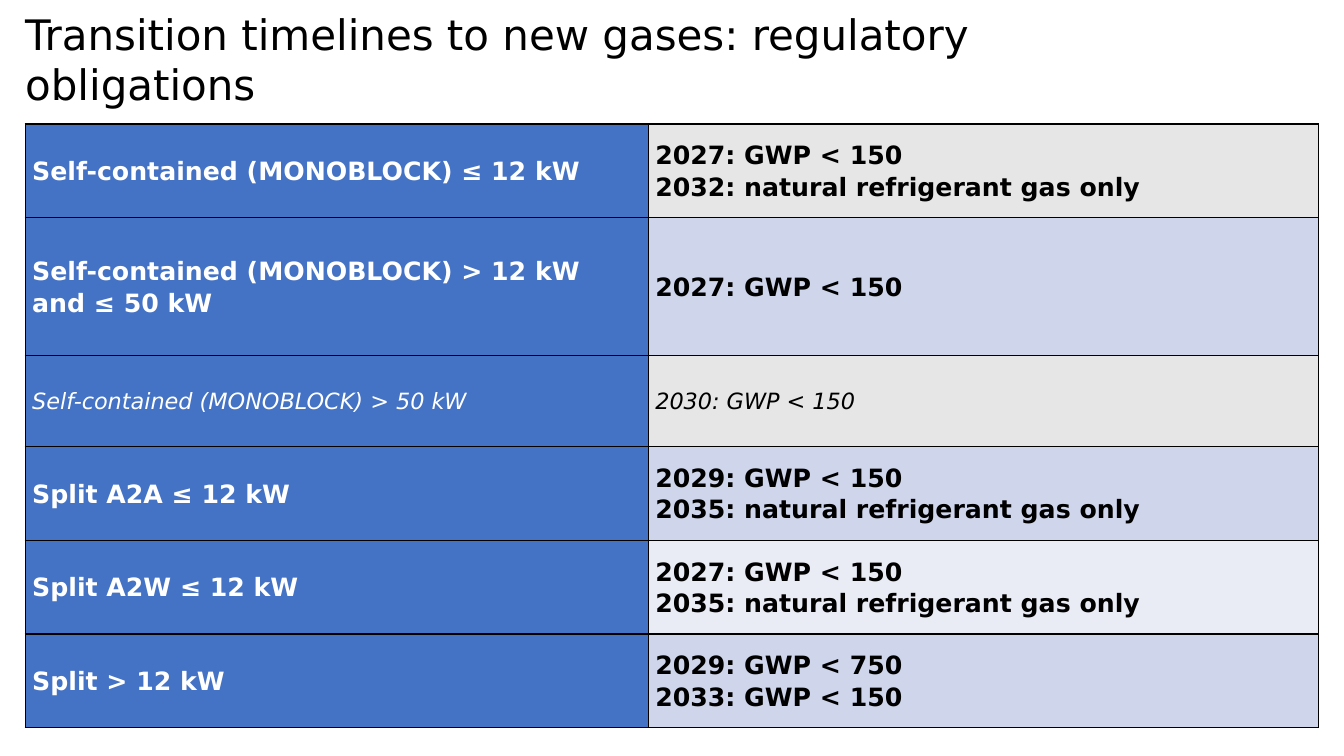
import pptx
import pptx.util
import pptx.dml.color
import pptx.enum.text
import pptx.oxml
import pptx.oxml.ns
from dataclasses import dataclass

Inches = pptx.util.Inches
Pt = pptx.util.Pt
Anchor = pptx.enum.text.MSO_ANCHOR


@dataclass(frozen=True)
class Theme:
    font: str = "DejaVu Sans"
    black: str = "000000"
    white: str = "FFFFFF"
    blue: str = "4472C4"
    grey: str = "E6E6E6"
    mid: str = "CFD5EA"
    pale: str = "E9EBF5"
    head: int = 30
    body: int = 18
    small: int = 16


THEME = Theme()
WIDTH, HEIGHT = 13.33, 7.5
COLS = [6.18, 6.65]

# Unit type, obligations, fill of the obligations, row height, minor row
ROWS = [
    ("Self-contained (MONOBLOCK) ≤ 12 kW",
     ["2027: GWP < 150", "2032: natural refrigerant gas only"],
     THEME.grey, 0.93, False),
    ("Self-contained (MONOBLOCK) > 12 kW and ≤ 50 kW",
     ["2027: GWP < 150"], THEME.mid, 1.37, False),
    ("Self-contained (MONOBLOCK) > 50 kW",
     ["2030: GWP < 150"], THEME.grey, 0.9, True),
    ("Split A2A ≤ 12 kW",
     ["2029: GWP < 150", "2035: natural refrigerant gas only"],
     THEME.mid, 0.93, False),
    ("Split A2W ≤ 12 kW",
     ["2027: GWP < 150", "2035: natural refrigerant gas only"],
     THEME.pale, 0.93, False),
    ("Split > 12 kW",
     ["2029: GWP < 750", "2033: GWP < 150"], THEME.mid, 0.93, False),
]


def color(code):
    return pptx.dml.color.RGBColor.from_string(code)


def write(frame, lines, size=THEME.body, ink=THEME.black, bold=False,
          slant=False, space=1.0):
    """Fill a text frame with one paragraph per line."""
    frame.word_wrap = True
    for i, line in enumerate(lines):
        para = frame.add_paragraph() if i else frame.paragraphs[0]
        para.alignment = pptx.enum.text.PP_ALIGN.LEFT
        para.line_spacing = space
        run = para.add_run()
        run.text = line
        font = run.font
        font.name, font.size = THEME.font, Pt(size)
        font.bold, font.italic = bold, slant
        font.color.rgb = color(ink)


def border(cell):
    """Draw a thin line on all four sides of a cell."""
    props = cell._tc.get_or_add_tcPr()
    for side in ("lnL", "lnR", "lnT", "lnB"):
        props.append(pptx.oxml.parse_xml(
            f'<a:{side} {pptx.oxml.ns.nsdecls("a")} w="{Pt(1)}"><a:solidFill>'
            f'<a:srgbClr val="{THEME.black}"/></a:solidFill></a:{side}>'))


def style(cell, lines, fill, ink, minor):
    border(cell)
    cell.fill.solid()
    cell.fill.fore_color.rgb = color(fill)
    cell.vertical_anchor = Anchor.MIDDLE
    cell.margin_left = cell.margin_right = Inches(0.07)
    cell.margin_top = cell.margin_bottom = 0
    write(cell.text_frame, lines, size=THEME.small if minor else THEME.body,
          ink=ink, bold=not minor, slant=minor, space=1.07)


def title(slide, text):
    box = slide.shapes.title
    box.left, box.top = Inches(0.15), Inches(0.31)
    box.width, box.height = Inches(10.64), Inches(0.55)
    frame = box.text_frame
    frame.auto_size = pptx.enum.text.MSO_AUTO_SIZE.NONE
    frame.vertical_anchor = Anchor.MIDDLE
    write(frame, [text], size=THEME.head)


def grid(slide):
    high = sum(row[3] for row in ROWS)
    table = slide.shapes.add_table(
        len(ROWS), len(COLS), Inches(0.25), Inches(1.23),
        Inches(sum(COLS)), Inches(high)).table
    table.first_row = table.horz_banding = False
    for col, wide in zip(table.columns, COLS):
        col.width = Inches(wide)
    for i, (unit, rules, fill, tall, minor) in enumerate(ROWS):
        table.rows[i].height = Inches(tall)
        style(table.cell(i, 0), [unit], THEME.blue, THEME.white, minor)
        style(table.cell(i, 1), rules, fill, THEME.black, minor)


def main():
    deck = pptx.Presentation()
    deck.slide_width, deck.slide_height = Inches(WIDTH), Inches(HEIGHT)
    slide = deck.slides.add_slide(deck.slide_layouts[5])
    title(slide, "Transition timelines to new gases: regulatory obligations")
    grid(slide)
    deck.save("out.pptx")


if __name__ == "__main__":
    main()
